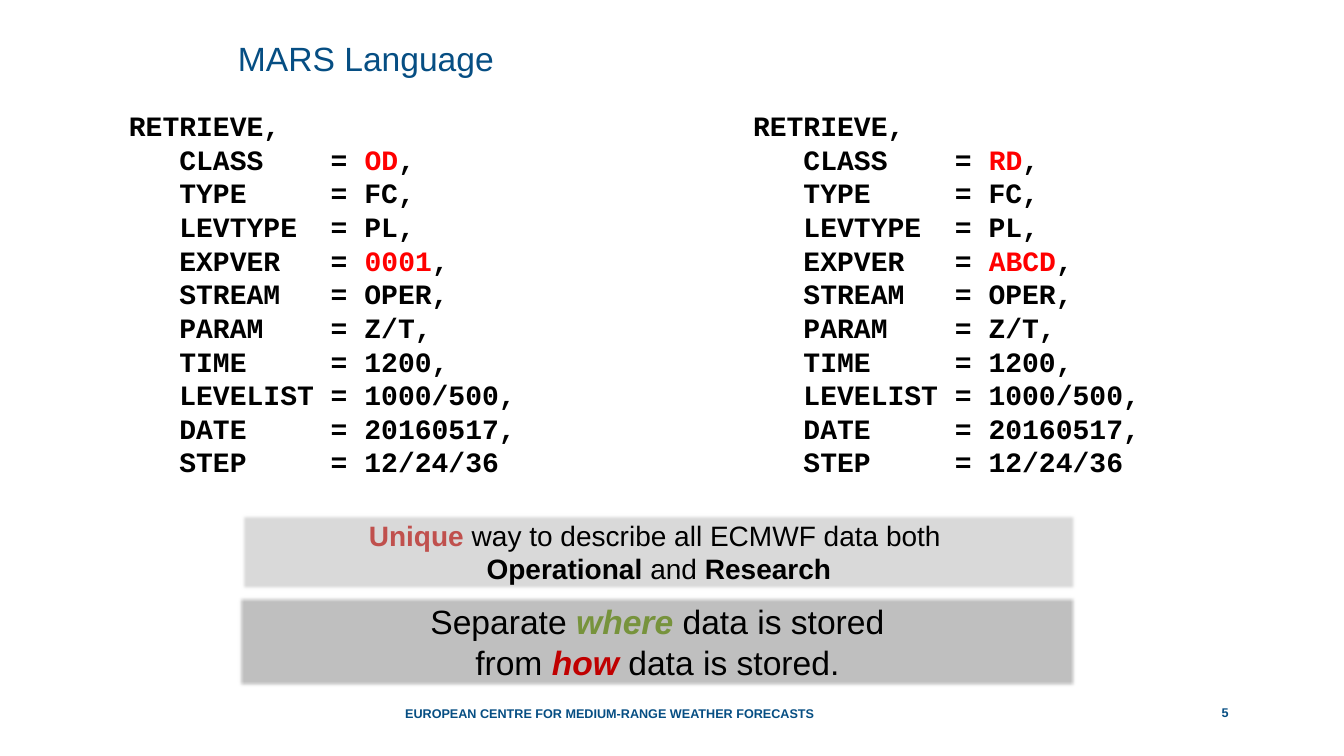
from lxml.etree import SubElement
from pptx import Presentation
from pptx.dml.color import RGBColor
from pptx.enum.shapes import MSO_SHAPE
from pptx.enum.text import MSO_ANCHOR, PP_ALIGN
from pptx.oxml.ns import qn
from pptx.util import Inches, Pt

COLOURS = {
    "navy": "064E83",
    "black": "000000",
    "red": "FF0000",
    "dark_red": "C00000",
    "brick": "C0504D",
    "olive": "77933C",
    "light_grey": "D9D9D9",
    "mid_grey": "BFBFBF",
}

TITLE = {"name": "Arial", "size": Pt(24), "color": "navy"}
FOOTER = {"name": "Arial", "size": Pt(9), "bold": True, "color": "navy"}
CODE = {"name": "Courier New", "size": Pt(20), "bold": True, "color": "black"}
UNIQUE = {"name": "Arial", "size": Pt(20), "color": "black"}
SEPARATE = {"name": "Arial", "size": Pt(24), "color": "black"}


def colour(name):
    return RGBColor.from_string(COLOURS[name])


def add_span(para, text, base, **changes):
    span = para.add_run()
    span.text = text
    for key, value in {**base, **changes}.items():
        if key == "color":
            span.font.color.rgb = colour(value)
        else:
            setattr(span.font, key, value)


def write_lines(frame, lines, base, align):
    for index, line in enumerate(lines):
        para = frame.paragraphs[0] if index == 0 else frame.add_paragraph()
        para.alignment = align
        for text, changes in line:
            add_span(para, text, base, **changes)


def add_label(page, box, text, base, align=PP_ALIGN.CENTER, anchor=MSO_ANCHOR.BOTTOM):
    frame = page.shapes.add_textbox(*map(Inches, box)).text_frame
    settings = {"word_wrap": True, "vertical_anchor": anchor}
    settings.update({f"margin_{side}": 0 for side in ("left", "top", "right", "bottom")})
    for key, value in settings.items():
        setattr(frame, key, value)
    write_lines(frame, [[(text, {})]], base, align)
    return frame


def add_title(page, box):
    frame = add_label(page, box, "MARS Language", TITLE, PP_ALIGN.LEFT, MSO_ANCHOR.TOP)
    frame.paragraphs[0].line_spacing = Pt(28)


def add_request(page, box, data_class, version):
    request = {
        "CLASS": data_class,
        "TYPE": "FC",
        "LEVTYPE": "PL",
        "EXPVER": version,
        "STREAM": "OPER",
        "PARAM": "Z/T",
        "TIME": "1200",
        "LEVELIST": "1000/500",
        "DATE": "20160517",
        "STEP": "12/24/36",
    }
    lines = [[("RETRIEVE,", {})]]
    for key, value in request.items():
        changes = {"color": "red"} if key in ("CLASS", "EXPVER") else {}
        line = [(f"   {key:<8} = ", {}), (value, changes)]
        if key != "STEP":
            line.append((",", {}))
        lines.append(line)
    frame = page.shapes.add_textbox(*map(Inches, box)).text_frame
    frame.word_wrap = True
    write_lines(frame, lines, CODE, PP_ALIGN.LEFT)


def add_panel(page, box, fill, anchor):
    panel = page.shapes.add_shape(MSO_SHAPE.RECTANGLE, *map(Inches, box))
    panel.fill.solid()
    panel.fill.fore_color.rgb = colour(fill)
    panel.line.fill.background()
    panel.shadow.inherit = False
    effects = panel._element.spPr.find(qn("a:effectLst"))
    SubElement(effects, qn("a:softEdge"), rad=str(Pt(2.5)))
    panel.text_frame.word_wrap = True
    panel.text_frame.vertical_anchor = anchor
    return panel.text_frame


def add_unique_panel(page, box):
    strong = {"bold": True}
    lines = [
        [("Unique ", {"bold": True, "color": "brick"}),
         ("way to describe all ECMWF data both ", {})],
        [("Operational", strong), (" and ", {}), ("Research", strong)],
    ]
    frame = add_panel(page, box, "light_grey", MSO_ANCHOR.TOP)
    write_lines(frame, lines, UNIQUE, PP_ALIGN.CENTER)


def add_separate_panel(page, box):
    frame = add_panel(page, box, "mid_grey", MSO_ANCHOR.MIDDLE)
    accent = {"bold": True, "italic": True}
    first = [("Separate ", {}), ("where", {**accent, "color": "olive"}), (" data is stored", {})]
    write_lines(frame, [first], SEPARATE, PP_ALIGN.CENTER)
    para = frame.paragraphs[0]
    para.add_line_break()
    add_span(para, "from ", SEPARATE)
    add_span(para, "how", SEPARATE, **accent, color="dark_red")
    add_span(para, " data is stored.", SEPARATE)


def main():
    deck = Presentation()
    deck.slide_width, deck.slide_height = Inches(13.33), Inches(7.5)
    page = deck.slides.add_slide(deck.slide_layouts[6])
    add_title(page, (2.36, 0.39, 8.61, 0.4))
    add_label(page, (10.97, 6.9, 2.36, 0.24), "5", FOOTER)
    add_label(page, (3.83, 6.9, 4.43, 0.25),
              "EUROPEAN CENTRE FOR MEDIUM-RANGE WEATHER FORECASTS", FOOTER)
    for left, data_class, version in ((1.18, "OD", "0001"), (7.37, "RD", "ABCD")):
        add_request(page, (left, 1.03, 4.78, 3.8), data_class, version)
    add_unique_panel(page, (2.39, 5.09, 8.29, 0.77))
    add_separate_panel(page, (2.36, 5.91, 8.32, 0.91))
    deck.save("out.pptx")


if __name__ == "__main__":
    main()
